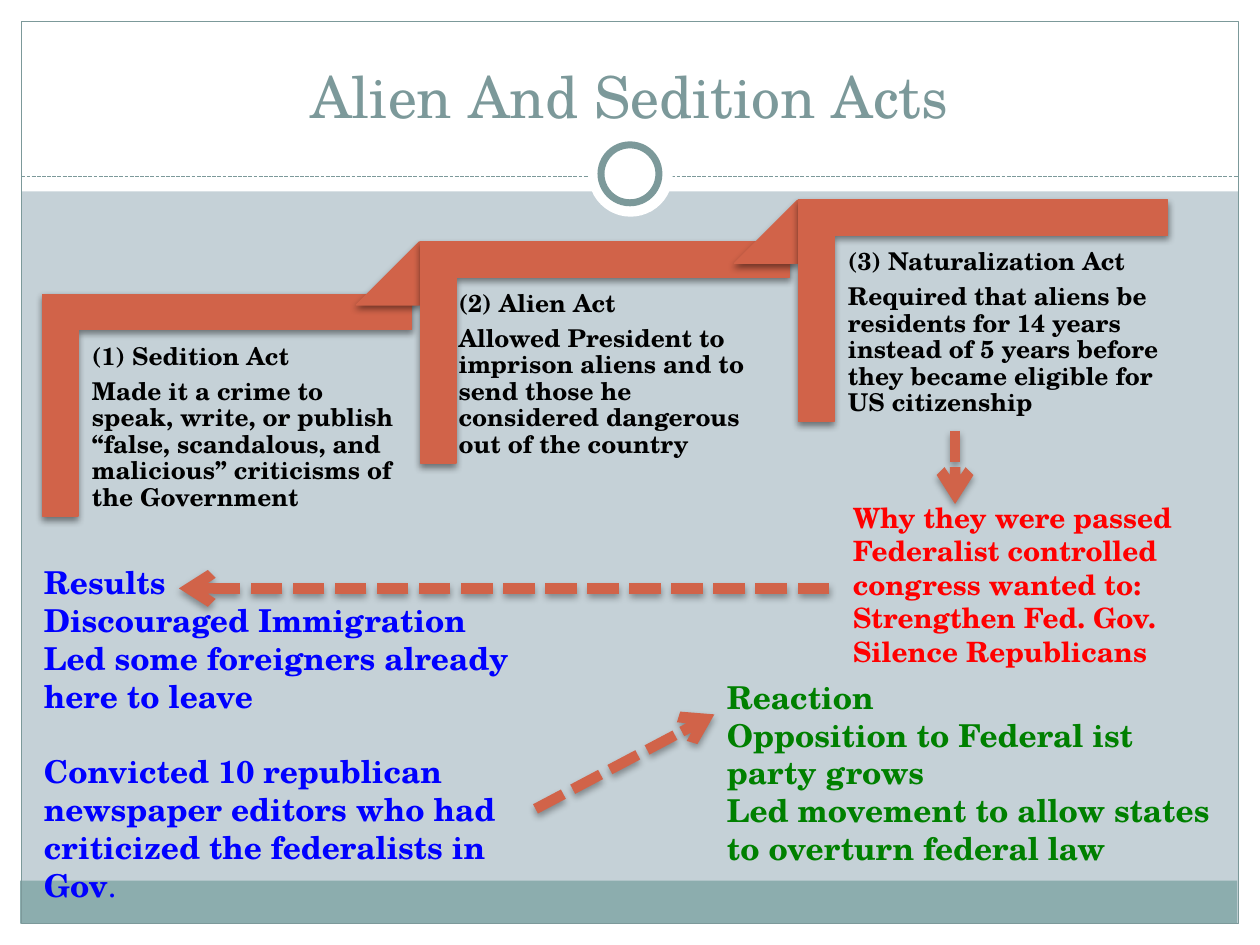
"""Build the Alien and Sedition Acts slide."""
from lxml import etree
from pptx import Presentation
from pptx.dml.color import RGBColor
from pptx.enum import dml, shapes, text
from pptx.oxml import ns
from pptx.util import Inches, Pt

FONT = "TeX Gyre Schola"
COLORS = {"white": "FFFFFF", "back": "C5D1D7", "band": "8CADAE", "teal": "7C999A",
          "rust": "D16349", "black": "000000", "red": "FF0000", "blue": "0000FF",
          "green": "008000"}
TITLE = "Alien And Sedition Acts"
ACTS = [
    (0.67, 1.75, 1.47, "(1) Sedition Act",
     "Made it a crime to speak, write, or publish “false, scandalous, and malicious” "
     "criticisms of the Government"),
    (3.58, 1.33, 2.32, "(2) Alien Act",
     "Allowed President to imprison aliens and to send those he considered dangerous "
     "out of the country"),
    (6.67, 1, 2.32, "(3) Naturalization Act",
     "Required that aliens be residents for 14 years instead of 5 years before they "
     "became eligible for US citizenship"),
]
REASONS = ["Why they were passed", "Federalist controlled congress wanted to:",
           "Strengthen Fed. Gov.", "Silence Republicans"]
RESULTS = ["Results", "Discouraged Immigration", "Led some foreigners already here to leave",
           "Convicted 10 republican newspaper editors who had criticized the federalists in Gov"]
REACTION = ["Reaction", "Opposition to Federal ist party grows",
            "Led movement to allow states to overturn federal law"]
ARROWS = [(7.58, 3.42, 7.58, 4), (6.58, 4.67, 1.42, 4.67), (4.25, 6.42, 5.67, 5.67)]
MARGINS = [(0, 7.33, 10, 0.17), (0, 0, 10, 1.52), (0, 0, 0.17, 7.5), (9.83, 0, 0.17, 7.5)]
SHAPE = shapes.MSO_SHAPE


def rgb(name):
    return RGBColor.from_string(COLORS[name])


def add_shadow(sp, alpha):
    props = sp._element.spPr
    effects = props.find(ns.qn("a:effectLst"))
    shadow = etree.SubElement(effects, ns.qn("a:outerShdw"), blurRad=str(Pt(4)),
                              dist=str(Pt(2)), dir="5400000", rotWithShape="0")
    color = etree.SubElement(shadow, ns.qn("a:srgbClr"), val=COLORS["black"])
    etree.SubElement(color, ns.qn("a:alpha"), val=str(alpha * 1000))


def add_shape(s, kind, box, fill=None, line=None, width=0.75):
    sp = s.shapes.add_shape(kind, *map(Inches, box))
    sp.shadow.inherit = False
    if fill:
        sp.fill.solid()
        sp.fill.fore_color.rgb = rgb(fill)
    else:
        sp.fill.background()
    if line:
        sp.line.color.rgb = rgb(line)
        sp.line.width = Pt(width)
    else:
        sp.line.fill.background()
    return sp


def add_line(s, ends, color, width):
    line = s.shapes.add_connector(shapes.MSO_CONNECTOR.STRAIGHT, *map(Inches, ends))
    line.line.color.rgb = rgb(color)
    line.line.width = Pt(width)
    line.line.dash_style = dml.MSO_LINE.SQUARE_DOT
    props = line._element.spPr
    props.find(ns.qn("a:ln")).find(ns.qn("a:prstDash")).set("val", "sysDash")
    etree.SubElement(props, ns.qn("a:effectLst"))
    return line


def add_arrow(s, ends):
    arrow = add_line(s, ends, "rust", 6)
    etree.SubElement(arrow._element.spPr.find(ns.qn("a:ln")), ns.qn("a:tailEnd"), type="arrow")
    add_shadow(arrow, 35)


def add_run(p, words, size, color, bold=True):
    r = p.add_run()
    r.text = words
    r.font.name = FONT
    r.font.size = Pt(size)
    r.font.bold = bold
    r.font.color.rgb = rgb(color)


def add_text(s, box, lines, size, color, bold=True):
    tf = s.shapes.add_textbox(*map(Inches, box)).text_frame
    tf.word_wrap = True
    for i, words in enumerate(lines):
        p = tf.paragraphs[0] if i == 0 else tf.add_paragraph()
        add_run(p, words, size, color, bold)
    return tf


def add_frame(s):
    for box in MARGINS:
        add_shape(s, SHAPE.RECTANGLE, box, "white")
    add_shape(s, SHAPE.RECTANGLE, (0.16, 6.99, 9.66, 0.34), "band")
    add_shape(s, SHAPE.RECTANGLE, (0.17, 0.17, 9.66, 7.16), line="teal")
    add_line(s, (0.17, 1.4, 9.83, 1.4), "teal", 0.75)
    add_shape(s, SHAPE.OVAL, (4.67, 1.05, 0.67, 0.67), "white")
    add_shape(s, SHAPE.OVAL, (4.77, 1.15, 0.46, 0.46), "white", "teal", 4)


def add_steps(s):
    for i, (left, top, height, name, detail) in enumerate(ACTS):
        corner = add_shape(s, SHAPE.CORNER, (0.92 + 3 * i, top, 1.76, 2.93), "rust", "rust")
        corner.rotation = 90
        corner.adjustments[0] = corner.adjustments[1] = 0.161
        add_shadow(corner, 45)
        tf = add_text(s, (left, top + 0.92, 2.65, height), [name, detail], 14, "black")
        tf.margin_left = tf.margin_right = tf.margin_top = tf.margin_bottom = Inches(0.06)
        for p in tf.paragraphs:
            p.line_spacing = 0.9
            p.space_after = Pt(4.9)
        if i + 1 < len(ACTS):
            box = (2.83 + 3 * i, ACTS[i + 1][1] + 0.59, 0.5, 0.5)
            fold = add_shape(s, SHAPE.ISOSCELES_TRIANGLE, box, "rust", "rust")
            fold.adjustments[0] = 1
            add_shadow(fold, 45)


def main():
    prs = Presentation()
    prs.slide_width, prs.slide_height = Inches(10), Inches(7.5)
    s = prs.slides.add_slide(prs.slide_layouts[6])
    s.background.fill.solid()
    s.background.fill.fore_color.rgb = rgb("back")
    add_frame(s)
    title = add_text(s, (0.33, 0.25, 9.33, 0.83), [TITLE], 33, "teal", False)
    title.vertical_anchor = text.MSO_ANCHOR.BOTTOM
    title.paragraphs[0].alignment = text.PP_ALIGN.CENTER
    add_steps(s)
    for ends in ARROWS:
        add_arrow(s, ends)
    add_text(s, (6.67, 3.92, 2.83, 1.45), REASONS, 16, "red")
    results = add_text(s, (0.25, 4.42, 4.33, 2.52), RESULTS, 18, "blue")
    convicted = results.paragraphs[-1]
    convicted.space_before = Pt(21.6)
    add_run(convicted, ".", 18, "blue", False)
    add_text(s, (5.67, 5.33, 4.08, 1.92), REACTION, 18, "green")
    prs.save("out.pptx")


if __name__ == "__main__":
    main()
